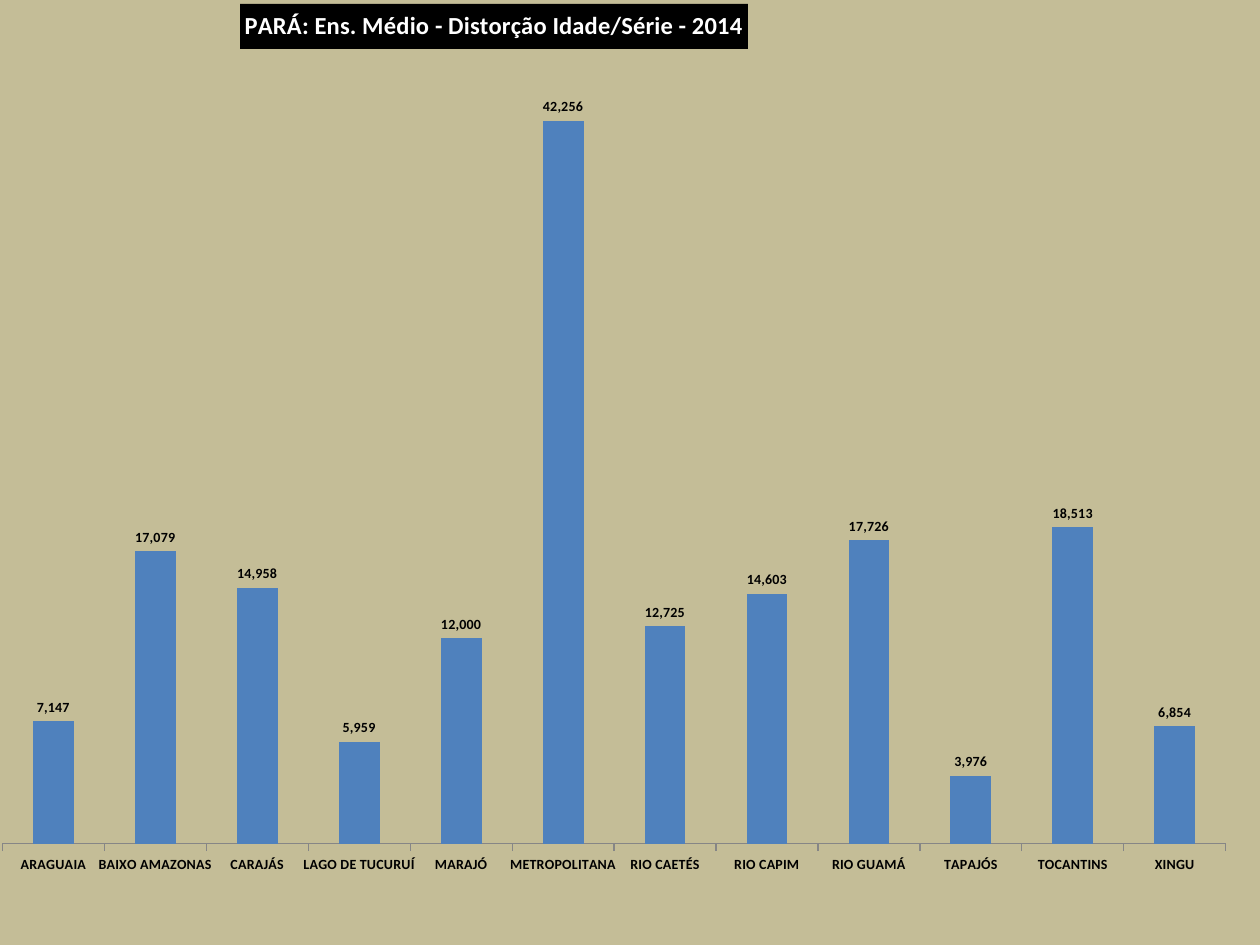
from dataclasses import dataclass
from typing import Optional

from pptx import Presentation
from pptx.chart.data import CategoryChartData
from pptx.dml.color import RGBColor
from pptx.enum.chart import XL_CHART_TYPE, XL_LABEL_POSITION, XL_TICK_MARK
from pptx.oxml import parse_xml
from pptx.oxml.ns import nsdecls, qn
from pptx.util import Inches, Pt

COLUMNS = XL_CHART_TYPE.COLUMN_CLUSTERED
OUTSIDE_END = XL_LABEL_POSITION.OUTSIDE_END
TICK_OUT, TICK_NONE = XL_TICK_MARK.OUTSIDE, XL_TICK_MARK.NONE
NUMBER_FORMAT = '_(* #,##0_);_(* \\(#,##0\\);_(* "-"_);_(@_)'


@dataclass(frozen=True)
class Theme:
    font: str = "Calibri"
    sand: str = "C4BD97"
    bar: str = "4F81BD"
    axis: str = "868686"
    black: str = "000000"
    white: str = "FFFFFF"
    title_size: int = 14
    base_size: int = 10
    label_size: int = 8


@dataclass(frozen=True)
class Region:
    name: str
    students: int


@dataclass(frozen=True)
class Layout:
    """Position as fractions of the chart; a title has no size."""
    x: float
    y: float
    w: Optional[float] = None
    h: Optional[float] = None


THEME = Theme()
TITLE = "PARÁ: Ens. Médio - Distorção Idade/Série - 2014"
REGIONS = [
    Region("ARAGUAIA", 7147),
    Region("BAIXO AMAZONAS", 17079),
    Region("CARAJÁS", 14958),
    Region("LAGO DE TUCURUÍ", 5959),
    Region("MARAJÓ", 12000),
    Region("METROPOLITANA", 42256),
    Region("RIO CAETÉS", 12725),
    Region("RIO CAPIM", 14603),
    Region("RIO GUAMÁ", 17726),
    Region("TAPAJÓS", 3976),
    Region("TOCANTINS", 18513),
    Region("XINGU", 6854),
]


def style_font(font, size: int, color: str, bold: bool = True) -> None:
    formats = {"name": THEME.font, "size": Pt(size), "bold": bold}
    for key, value in formats.items():
        setattr(font, key, value)
    font.color.rgb = RGBColor.from_string(color)


def solid_fill(fill, color: str) -> None:
    fill.solid()
    fill.fore_color.rgb = RGBColor.from_string(color)


def area_properties(color: str):
    """Shape properties for a borderless chart or plot area."""
    return parse_xml(
        f'<c:spPr {nsdecls("c", "a")}><a:solidFill><a:srgbClr val="{color}"/>'
        "</a:solidFill><a:ln><a:noFill/></a:ln></c:spPr>"
    )


def place(element, layout: Layout) -> None:
    """Give a chart title or plot area a manual layout."""
    old = element.find(qn("c:layout"))
    if old is not None:
        element.remove(old)
    target = '<c:layoutTarget val="inner"/>' if layout.w else ""
    sizes = f'<c:w val="{layout.w}"/><c:h val="{layout.h}"/>' if layout.w else ""
    new = parse_xml(
        f'<c:layout {nsdecls("c")}><c:manualLayout>{target}'
        '<c:xMode val="edge"/><c:yMode val="edge"/>'
        f'<c:x val="{layout.x}"/><c:y val="{layout.y}"/>{sizes}'
        "</c:manualLayout></c:layout>"
    )
    text = element.find(qn("c:tx"))
    if text is None:
        element.insert(0, new)
    else:
        text.addnext(new)


def add_title(chart) -> None:
    title = chart.chart_title
    tf = title.text_frame
    r = tf.paragraphs[0].add_run()
    r.text = TITLE
    style_font(r.font, THEME.title_size, THEME.white)
    solid_fill(title.format.fill, THEME.black)
    place(tf._txBody.getparent().getparent(), Layout(0.193, 0.004))


def format_axes(chart) -> None:
    axis = chart.category_axis
    axis.major_tick_mark = TICK_OUT
    axis.minor_tick_mark = TICK_NONE
    style_font(axis.tick_labels.font, THEME.label_size, THEME.black)
    axis.format.line.color.rgb = RGBColor.from_string(THEME.axis)

    formats = {"minimum_scale": 0, "maximum_scale": 45000,
               "has_major_gridlines": False, "visible": False}
    for key, value in formats.items():
        setattr(chart.value_axis, key, value)


def format_columns(plot) -> None:
    plot.gap_width = 150
    plot.vary_by_categories = False
    solid_fill(plot.series[0].format.fill, THEME.bar)
    plot.has_data_labels = True
    formats = {"show_value": True, "position": OUTSIDE_END,
               "number_format": NUMBER_FORMAT, "number_format_is_linked": False}
    for key, value in formats.items():
        setattr(plot.data_labels, key, value)
    style_font(plot.data_labels.font, THEME.label_size, THEME.black)


def add_region_chart(s) -> None:
    data = CategoryChartData(number_format=NUMBER_FORMAT)
    data.categories = [region.name for region in REGIONS]
    data.add_series("Series 1", [region.students for region in REGIONS])
    frame = s.shapes.add_chart(
        COLUMNS, Inches(-0.03), Inches(0), Inches(10.03), Inches(7.5), data)
    chart = frame.chart
    chart.has_legend = False
    style_font(chart.font, THEME.base_size, THEME.black, bold=False)

    add_title(chart)
    format_axes(chart)
    format_columns(chart.plots[0])

    # Backgrounds and plot position
    root = chart._chartSpace.find(qn("c:chart"))
    root.addnext(area_properties(THEME.sand))
    plot_area = root.find(qn("c:plotArea"))
    place(plot_area, Layout(0.005, 0.078, 0.968, 0.815))
    plot_area.append(area_properties(THEME.sand))


def main() -> None:
    prs = Presentation()
    prs.slide_width, prs.slide_height = Inches(10), Inches(7.5)
    s = prs.slides.add_slide(prs.slide_layouts[6])
    add_region_chart(s)
    prs.save("out.pptx")


if __name__ == "__main__":
    main()
